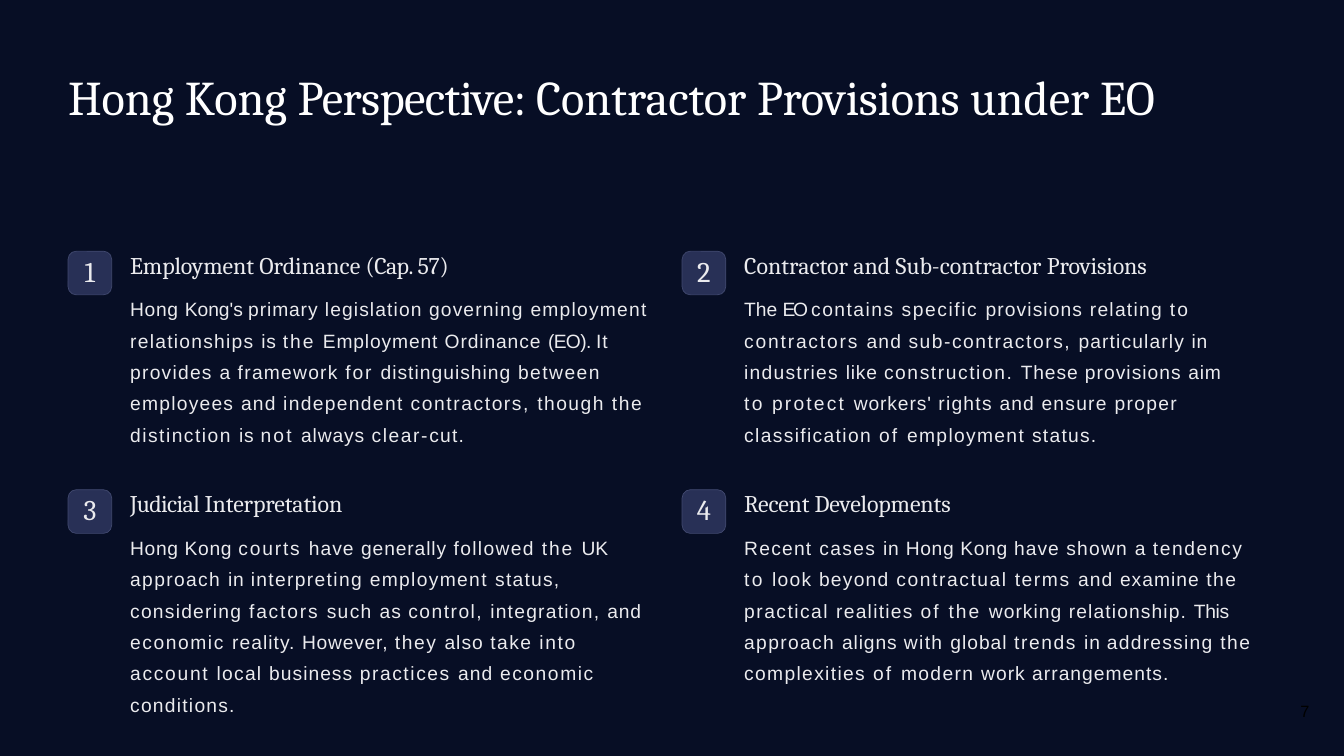
from pptx import Presentation
from pptx.dml.color import RGBColor
from pptx.enum.shapes import MSO_SHAPE
from pptx.enum.text import MSO_ANCHOR, MSO_AUTO_SIZE, PP_ALIGN
from pptx.util import Inches, Pt

NAVY = RGBColor(0x07, 0x0E, 0x25)
INDIGO = RGBColor(0x28, 0x30, 0x56)
EDGE = RGBColor(0x41, 0x49, 0x6F)
WHITE = RGBColor(0xFF, 0xFF, 0xFF)
PALE = RGBColor(0xEB, 0xEB, 0xEE)
BLACK = RGBColor(0x00, 0x00, 0x00)
ROUNDED = MSO_SHAPE.ROUNDED_RECTANGLE
TOP = MSO_ANCHOR.TOP
FIXED = MSO_AUTO_SIZE.NONE
LEFT, CENTER, RIGHT = PP_ALIGN.LEFT, PP_ALIGN.CENTER, PP_ALIGN.RIGHT

TITLE = [("Hong Kong ", 0), ("Perspective: ", -0.5), ("Contractor ", 0),
         ("Provisions ", -0.2), ("under ", 0), ("EO", -0.2)]

# Each item: text width, heading runs, body runs; a run is text and letter spacing in points.
ITEMS = [
    (6.19,
     [("Employment ", -0.1), ("Ordinance ", 0), ("(Cap. ", -0.5), ("57)", -0.2)],
     [("Hong ", 0.6), ("Kong's ", 0), ("primary ", 0.8), ("legislation governing ", 1),
      ("employment relationships ", 1.1), ("is ", 0.7), ("the ", 1.7),
      ("Employment Ordinance ", 0.8), ("(EO). ", -0.5), ("It ", 0.7), ("provides ", 1.1),
      ("a ", 0.9), ("framework ", 1.1), ("for ", 1.6), ("distinguishing ", 0.9),
      ("between ", 1.3), ("employees ", 1.1), ("and ", 1), ("independent ", 1.2),
      ("contractors, ", 1.4), ("though ", 1.3), ("the ", 1.4), ("distinction ", 1.3),
      ("is ", 0.7), ("not ", 1.8), ("always ", 0.8), ("clear-", 1.4), ("cut.", 1.1)]),
    (5.95,
     [("Contractor and Sub-contractor ", 0), ("Provisions", -0.1)],
     [("The ", 0), ("EO ", -1.9), ("contains ", 1.3), ("specific ", 1.4),
      ("provisions ", 1), ("relating ", 1.1), ("to ", 1.9), ("contractors ", 1.6),
      ("and ", 1), ("sub-", 1.3), ("contractors, ", 1.4), ("particularly ", 1),
      ("in ", 0.5), ("industries ", 1.1), ("like ", 0.7), ("construction. ", 1.4),
      ("These ", 0.8), ("provisions ", 0.9), ("aim ", 0.7), ("to protect ", 1.9),
      ("workers' ", 0.8), ("rights ", 1.1), ("and ", 1), ("ensure ", 1.1),
      ("proper classification ", 1.2), ("of ", 1.9), ("employment ", 1.2),
      ("status.", 1.1)]),
    (6.28,
     [("Judicial ", -0.5), ("Interpretation", -0.1)],
     [("Hong Kong ", 0.6), ("courts ", 1.6), ("have ", 0.9), ("generally ", 0.8),
      ("followed ", 1.2), ("the ", 1.7), ("UK ", -0.2), ("approach ", 1.2), ("in ", 0.7),
      ("interpreting employment ", 1.2), ("status, considering ", 1.1), ("factors ", 1.6),
      ("such ", 1.2), ("as ", 0.9), ("control, ", 1.3), ("integration, ", 1.1),
      ("and ", 0.8), ("economic ", 1.4), ("reality. ", 0.9), ("However, ", 0.7),
      ("they ", 1.4), ("also ", 0.9), ("take ", 1.3), ("into ", 1.4), ("account ", 1.5),
      ("local ", 1.1), ("business ", 0.9), ("practices ", 1.4), ("and ", 1),
      ("economic ", 1.4), ("conditions.", 1.1)]),
    (6.15,
     [("Recent ", -0.2), ("Developments", -0.1)],
     [("Recent ", 1.1), ("cases ", 1.2), ("in ", 0.7), ("Hong Kong ", 0.6), ("have ", 0.9),
      ("shown ", 1.1), ("a ", 0.9), ("tendency ", 1.4), ("to ", 1.9), ("look beyond ", 1.1),
      ("contractual terms ", 1.4), ("and ", 1), ("examine ", 0.9), ("the ", 1.4),
      ("practical ", 1.3), ("realities ", 1.1), ("of ", 1.9), ("the ", 1.8),
      ("working ", 0.9), ("relationship. ", 1), ("This ", -0.2), ("approach ", 1.2),
      ("aligns ", 0.8), ("with ", 1.2), ("global ", 0.9), ("trends ", 1.4), ("in ", 0.7),
      ("addressing ", 1.1), ("the ", 1.4), ("complexities ", 1.2), ("of ", 1.9),
      ("modern ", 1.2), ("work arrangements.", 0.9)]),
]


def set_frame(shape, left, top, wrap=True):
    frame = shape.text_frame
    frame.auto_size = FIXED
    frame.word_wrap = wrap
    frame.vertical_anchor = TOP
    frame.margin_left, frame.margin_top = Inches(left), Inches(top)
    frame.margin_right = frame.margin_bottom = 0
    return frame


def write(para, runs, font, size, color, before, align=LEFT):
    para.alignment = align
    para.space_before = Pt(before)
    for text, gap in runs:
        run = para.add_run()
        run.text = text
        run.font.name = font
        run.font.size = Pt(size)
        run.font.color.rgb = color
        run._r.get_or_add_rPr().set("spc", str(round(gap * 100)))


prs = Presentation()
prs.slide_width, prs.slide_height = Inches(16), Inches(9)
slide = prs.slides.add_slide(prs.slide_layouts[5])
slide.background.fill.solid()
slide.background.fill.fore_color.rgb = NAVY

title = slide.shapes.title
title.left, title.top = Inches(0.7), Inches(0.72)
title.width, title.height = Inches(14.61), Inches(1.3)
write(set_frame(title, 0.11, 0.08).paragraphs[0], TITLE, "Cambria", 41.5, WHITE, 1.1)

for i, (width, head, body) in enumerate(ITEMS):
    row, col = divmod(i, 2)
    x, y = 0.81 + 7.31 * col, 2.99 + 2.84 * row

    badge = slide.shapes.add_shape(ROUNDED, Inches(x), Inches(y), Inches(0.52), Inches(0.52))
    badge.adjustments[0] = 0.19
    badge.shadow.inherit = False
    badge.fill.solid()
    badge.fill.fore_color.rgb = INDIGO
    badge.line.color.rgb = EDGE
    badge.line.width = Pt(0.6)
    frame = set_frame(badge, 0, 0, False)
    write(frame.paragraphs[0], [(str(i + 1), 0)], "Cambria", 24.5, PALE, 0.9, CENTER)

    box = slide.shapes.add_textbox(Inches(x + 0.73), Inches(y - 0.02), Inches(width), Inches(2.37))
    frame = set_frame(box, 0.01, 0.01)
    write(frame.paragraphs[0], head, "Cambria", 20.5, PALE, 1)
    para = frame.add_paragraph()
    para.line_spacing = 1.36
    write(para, body, "Arial", 16.5, PALE, 8.8)

page = slide.shapes.add_textbox(Inches(15.1), Inches(8.35), Inches(0.49), Inches(0.3))
write(set_frame(page, 0, 0).paragraphs[0], [("7", 0)], "Arial", 14, BLACK, 0, RIGHT)

prs.save("out.pptx")
